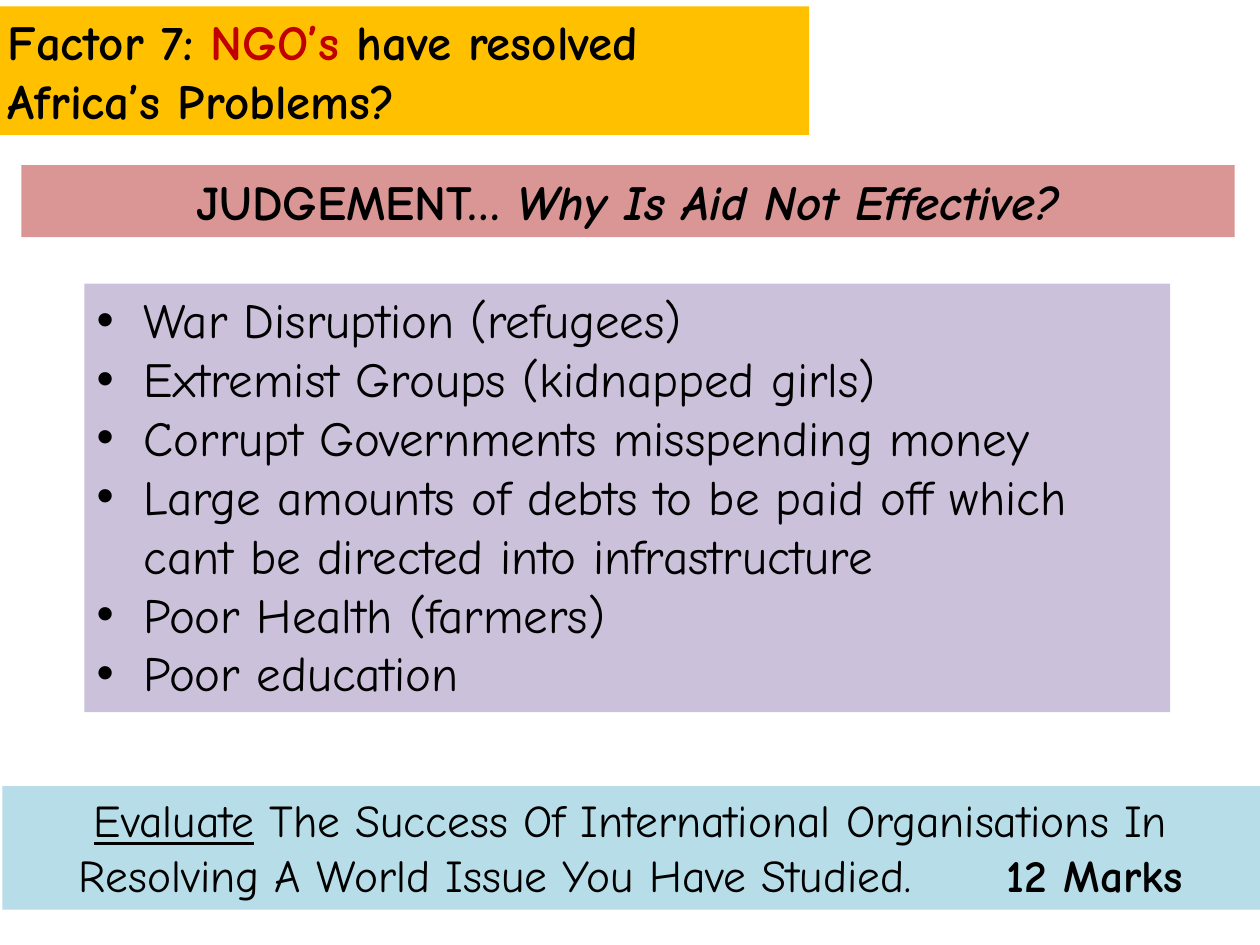
from pptx import Presentation
from pptx.dml.color import RGBColor
from pptx.enum.shapes import MSO_SHAPE
from pptx.enum.text import MSO_ANCHOR, MSO_AUTO_SIZE, PP_ALIGN
from pptx.util import Cm, Pt
from lxml.etree import SubElement
from pptx.oxml.ns import qn

COLORS = {"gold": "FFC000", "rose": "D99694", "lilac": "CCC1DA",
          "aqua": "B7DEE8", "black": "000000", "red": "C00000"}
FONT = "Comic Neue"


def add_text(p, text, size=28, color="black", bold=False, italic=False,
             underline=False, spacing=None):
    r = p.add_run()
    r.text = text
    f = r.font
    f.name, f.size = FONT, Pt(size)
    f.bold, f.italic, f.underline = bold, italic, underline
    f.color.rgb = RGBColor.from_string(COLORS[color])
    if spacing:
        f._element.set("spc", str(spacing * 100))


def set_box(sp, left, top, width, height, fill, align, anchor=MSO_ANCHOR.TOP):
    sp.left, sp.top, sp.width, sp.height = Cm(left), Cm(top), Cm(width), Cm(height)
    sp.fill.solid()
    sp.fill.fore_color.rgb = RGBColor.from_string(COLORS[fill])
    tf = sp.text_frame
    tf.word_wrap = True
    tf.auto_size = MSO_AUTO_SIZE.NONE
    tf.vertical_anchor = anchor
    tf.paragraphs[0].alignment = align
    return tf


prs = Presentation()
prs.slide_width, prs.slide_height = Cm(25.4), Cm(19.05)
s = prs.slides.add_slide(prs.slide_layouts[5])

# Title
tf = set_box(s.shapes.title, -0.1, 0.13, 16.41, 2.59, "gold",
             PP_ALIGN.LEFT, MSO_ANCHOR.MIDDLE)
p = tf.paragraphs[0]
add_text(p, "Factor 7: ", bold=True)
add_text(p, "NGO’s", bold=True, color="red")
add_text(p, " have resolved Africa’s Problems?", bold=True)

# Coloured panels
panels = {}
for name, box in {
    "reasons": (1.7, 5.72, 21.89, 8.64, "lilac", PP_ALIGN.LEFT),
    "question": (0.05, 15.85, 25.35, 2.49, "aqua", PP_ALIGN.CENTER),
    "judgement": (0.43, 3.33, 24.46, 1.45, "rose", PP_ALIGN.CENTER),
}.items():
    sp = s.shapes.add_textbox(0, 0, 0, 0)
    panels[name] = set_box(sp, *box)

# Judgement heading
p = panels["judgement"].paragraphs[0]
add_text(p, "JUDGEMENT… ", bold=True)
add_text(p, "Why Is Aid Not Effective?", bold=True, italic=True)

# Bulleted reasons
reasons = [
    "War Disruption (refugees)",
    "Extremist Groups (kidnapped girls)",
    "Corrupt Governments misspending money",
    "Large amounts of debts to be paid off which cant be directed into infrastructure",
    "Poor Health (farmers)",
    "Poor education",
]
tf = panels["reasons"]
for i, reason in enumerate(reasons):
    p = tf.add_paragraph() if i else tf.paragraphs[0]
    pPr = p._p.get_or_add_pPr()
    pPr.set("marL", str(Cm(0.95)))
    pPr.set("indent", str(-Cm(0.95)))
    SubElement(pPr, qn("a:buFont")).set("typeface", "Arial")
    SubElement(pPr, qn("a:buChar")).set("char", "•")
    add_text(p, reason)

# Exam question, with a widened space before the marks
p = panels["question"].paragraphs[0]
add_text(p, "Evaluate", size=26, underline=True)
add_text(p, " The Success Of International Organisations In "
            "Resolving A World Issue You Have Studied.", size=26)
add_text(p, " ", size=26, spacing=45)
add_text(p, "12 Marks", size=26, bold=True)

prs.save("out.pptx")
